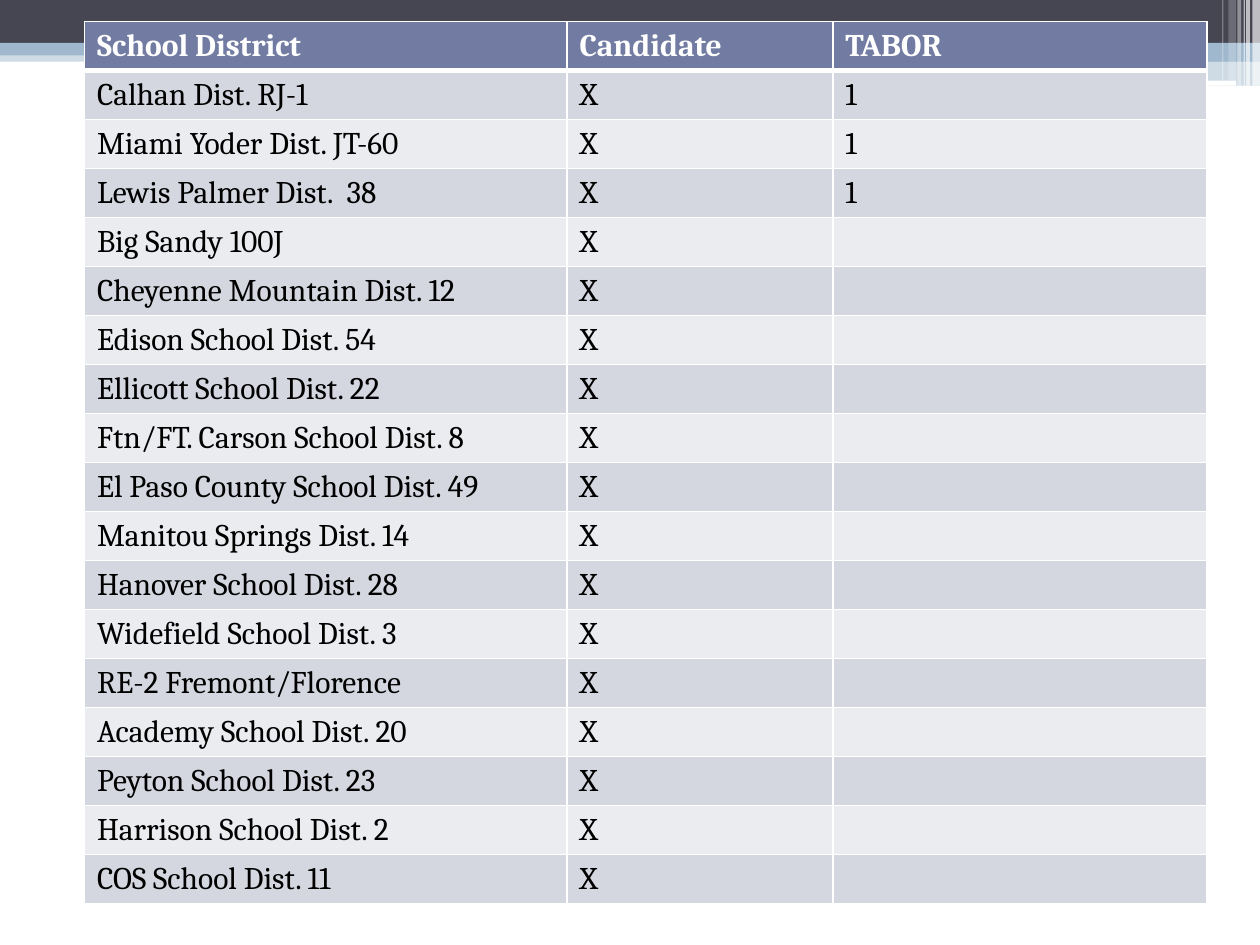
"""Build a slide tabulating school districts with candidate and TABOR measures."""
from lxml.etree import SubElement
from pptx import Presentation
from pptx.dml.color import RGBColor
from pptx.enum.shapes import MSO_SHAPE
from pptx.oxml import parse_xml
from pptx.oxml.ns import nsdecls, qn
from pptx.util import Inches, Pt

WHITE = RGBColor(0xFF, 0xFF, 0xFF)
BLACK = RGBColor(0x00, 0x00, 0x00)
SLATE = RGBColor(0x46, 0x46, 0x53)
SKY = RGBColor(0x9F, 0xB8, 0xCD)
HEADER_FILL = RGBColor(0x72, 0x7C, 0xA3)
BAND_FILLS = (RGBColor(0xD5, 0xD7, 0xE0), RGBColor(0xEB, 0xEC, 0xF0))

HEADERS = ("School District", "Candidate", "TABOR")
DISTRICTS = (
    "Calhan Dist. RJ-1",
    "Miami Yoder Dist. JT-60",
    "Lewis Palmer Dist.  38",
    "Big Sandy 100J",
    "Cheyenne Mountain Dist. 12",
    "Edison School Dist. 54",
    "Ellicott School Dist. 22",
    "Ftn/FT. Carson School Dist. 8",
    "El Paso County School Dist. 49",
    "Manitou Springs Dist. 14",
    "Hanover School Dist. 28",
    "Widefield School Dist. 3",
    "RE-2 Fremont/Florence",
    "Academy School Dist. 20",
    "Peyton School Dist. 23",
    "Harrison School Dist. 2",
    "COS School Dist. 11",
)
TABOR_DISTRICTS = DISTRICTS[:3]

COLUMN_WIDTHS = (3.83, 2.11, 2.97)
ROW_HEIGHT = 0.37
TABLE_LEFT, TABLE_TOP = 0.67, 0.17

RECTANGLE, ROUNDED = MSO_SHAPE.RECTANGLE, MSO_SHAPE.ROUNDED_RECTANGLE
BANNER = (
    (RECTANGLE, 0, 0.4, 10, 0.09, SKY, 50),
    (RECTANGLE, 0, 0, 10, 0.34, SLATE, 100),
    (RECTANGLE, 0, 0.34, 10, 0.1, SKY, 100),
    (RECTANGLE, 5.92, 0.39, 4.08, 0.1, SKY, 100),
    (RECTANGLE, 5.92, 0.48, 4.08, 0.2, SKY, 50),
    (ROUNDED, 5.91, 0.54, 3.35, 0.03, WHITE, 100),
    (ROUNDED, 8.06, 0.64, 1.75, 0.04, WHITE, 100),
    (RECTANGLE, 9.94, 0, 0.06, 0.68, WHITE, 65),
    (RECTANGLE, 9.89, 0, 0.03, 0.68, WHITE, 65),
    (RECTANGLE, 9.87, 0, 0.01, 0.68, WHITE, 60),
    (RECTANGLE, 9.82, 0, 0.03, 0.68, WHITE, 40),
    (RECTANGLE, 9.75, 0, 0.06, 0.64, WHITE, 20),
    (RECTANGLE, 9.7, 0, 0.01, 0.64, WHITE, 30),
)


def add_banner_part(slide, kind, left, top, width, height, color, opacity):
    shape = slide.shapes.add_shape(
        kind, Inches(left), Inches(top), Inches(width), Inches(height))
    shape.shadow.inherit = False
    shape.line.fill.background()
    shape.fill.solid()
    shape.fill.fore_color.rgb = color
    if opacity < 100:
        color_element = shape.fill._xPr.find(".//" + qn("a:srgbClr"))
        SubElement(color_element, qn("a:alpha"), val=str(opacity * 1000))


def set_borders(cell, top, bottom):
    properties = cell._tc.get_or_add_tcPr()
    sides = (("lnL", 1), ("lnR", 1), ("lnT", top), ("lnB", bottom))
    for position, (side, points) in enumerate(sides):
        properties.insert(position, parse_xml(
            f'<a:{side} {nsdecls("a")} w="{Pt(points)}"><a:solidFill>'
            f'<a:srgbClr val="{WHITE}"/></a:solidFill></a:{side}>'))


def style_cell(cell, text, row):
    is_header = row == 0
    cell.text = text
    cell.fill.solid()
    cell.fill.fore_color.rgb = HEADER_FILL if is_header else BAND_FILLS[(row - 1) % 2]
    set_borders(cell, 3 if row == 1 else 1, 3 if is_header else 1)
    font = cell.text_frame.paragraphs[0].font
    font.name, font.size, font.bold = "Cambria", Pt(18), is_header
    font.color.rgb = WHITE if is_header else BLACK


def add_district_table(slide):
    rows = [HEADERS] + [
        (district, "X", "1" if district in TABOR_DISTRICTS else "")
        for district in DISTRICTS]
    table = slide.shapes.add_table(
        len(rows), len(HEADERS), Inches(TABLE_LEFT), Inches(TABLE_TOP),
        Inches(sum(COLUMN_WIDTHS)), Inches(ROW_HEIGHT * len(rows))).table
    for column, width in zip(table.columns, COLUMN_WIDTHS):
        column.width = Inches(width)
    for row, texts in enumerate(rows):
        table.rows[row].height = Inches(ROW_HEIGHT)
        for column, text in enumerate(texts):
            style_cell(table.cell(row, column), text, row)


def main():
    presentation = Presentation()
    presentation.slide_width, presentation.slide_height = Inches(10), Inches(7.5)
    slide = presentation.slides.add_slide(presentation.slide_layouts[6])
    for part in BANNER:
        add_banner_part(slide, *part)
    add_district_table(slide)
    presentation.save("out.pptx")


if __name__ == "__main__":
    main()
